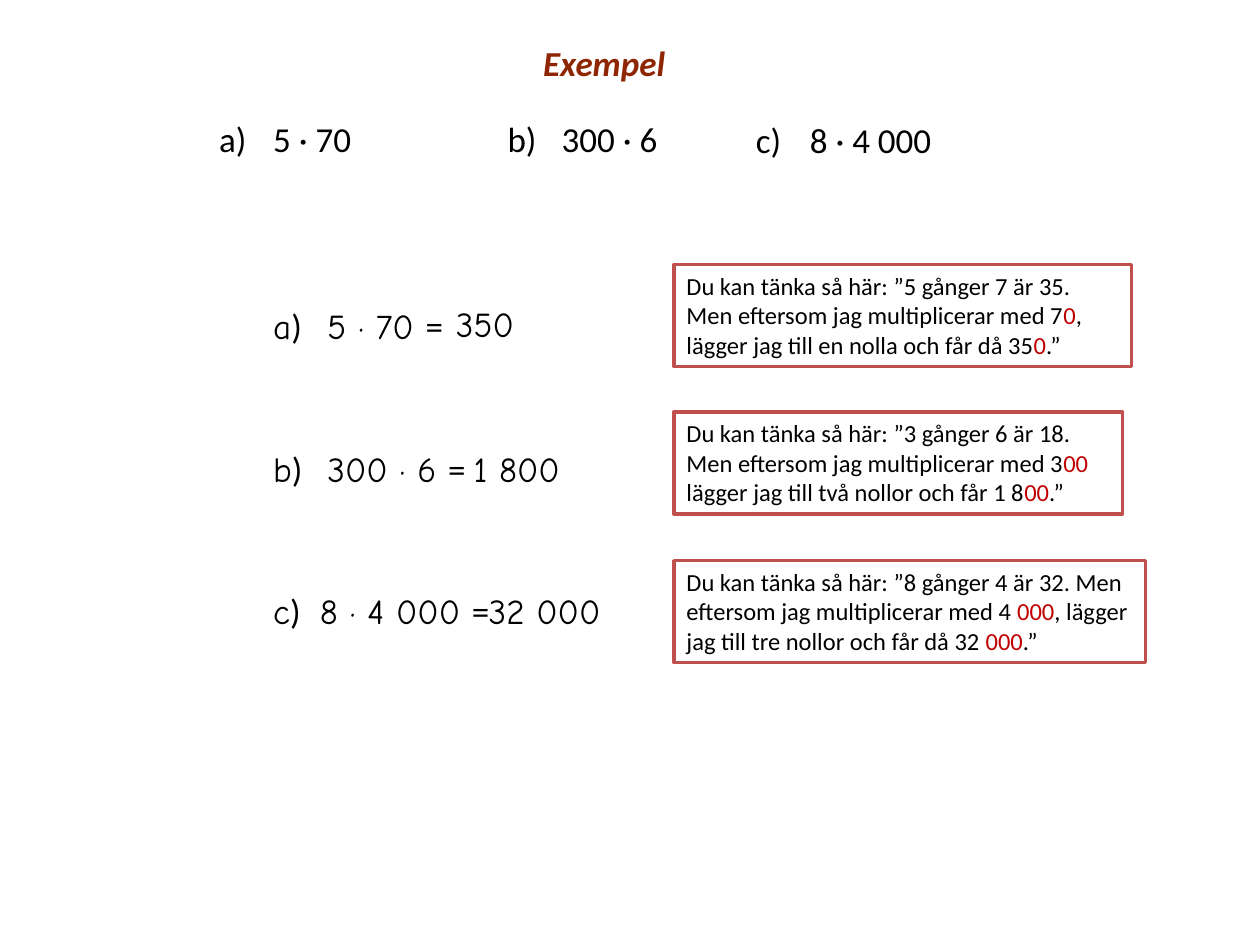
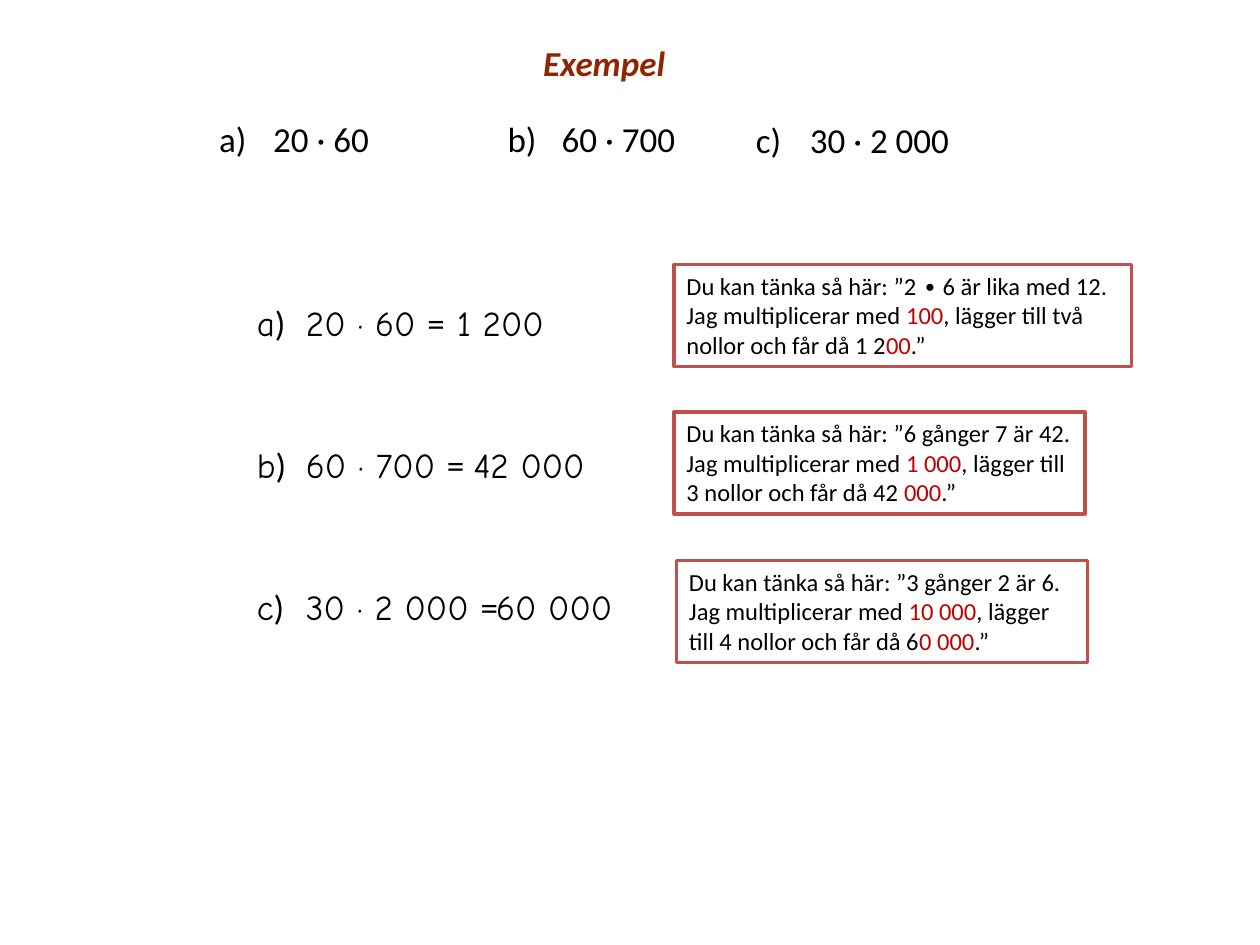
from collections import namedtuple
from dataclasses import dataclass

from pptx import Presentation
from pptx.dml.color import RGBColor as RGB
from pptx.enum.shapes import MSO_SHAPE as SHAPE
from pptx.enum.text import MSO_ANCHOR as ANCHOR, MSO_AUTO_SIZE as FIT, PP_ALIGN as ALIGN
from pptx.util import Emu, Pt


@dataclass(frozen=True)
class Theme:
    """Colours, fonts and type sizes shared by the slides."""
    ink: RGB = RGB.from_string("000000")
    paper: RGB = RGB.from_string("FFFFFF")
    title: RGB = RGB.from_string("8E2503")
    zeros: RGB = RGB.from_string("C00000")
    frame: RGB = RGB.from_string("C0504D")
    sans: str = "Calibri"
    hand: str = "Comic Neue"
    large: int = 20
    small: int = 14
    border: int = 2


T = Theme()
PX = 9144
LINE_H, LABEL_W, TASK_W, TASK_DX = 44, 54, 203, 43
ROW_STEP, CALLOUT_X, CALLOUT_H = 113, 535, 81
HEADER_SPOTS = [(164, 88), (393, 88), (590, 89)]

Box = namedtuple("Box", "x y w h")
Row = namedtuple("Row", "task task_dx task_w answer answer_dx answer_dy answer_w")
Callout = namedtuple("Callout", "dx w text")
Example = namedtuple("Example", "x y rows callouts")

EXAMPLES = [
    Example(207, 237, [
        Row("5 · 70", 43, 203, "350", 145, -2, 203),
        Row("300 · 6", 43, 203, "1 800", 159, 0, 98),
        Row("8 · 4 000", 37, 203, "32 000", 171, 0, 203),
    ], [
        Callout(0, 363, "Du kan tänka så här: ”5 gånger 7 är 35. Men eftersom jag multiplicerar "
                        "med 7|0|, lägger jag till en nolla och får då 35|0|.” "),
        Callout(0, 356, "Du kan tänka så här: ”3 gånger 6 är 18. Men eftersom jag multiplicerar "
                        "med 3|00 |lägger jag till två nollor och får 1 8|00|.” "),
        Callout(0, 374, "Du kan tänka så här: ”8 gånger 4 är 32. Men eftersom jag multiplicerar "
                        "med 4 |000|, lägger jag till tre nollor och får då 32 |000|.” "),
    ]),
    Example(194, 234, [
        Row("20 · 60", 39, 222, "1 200", 159, 0, 203),
        Row("60 · 700", 39, 215, "42 000", 172, 0, 112),
        Row("30 · 2 000", 39, 222, "60 000", 190, 0, 203),
    ], [
        Callout(0, 363, "Du kan tänka så här: ”2 ∙ 6 är lika med 12. Jag multiplicerar med "
                        "|100|, lägger till två nollor och får då 1 2|00|.” "),
        Callout(0, 326, "Du kan tänka så här: ”6 gånger 7 är 42. Jag multiplicerar med "
                        "|1 000|, lägger till 3 nollor och får då 42 |000|.” "),
        Callout(2, 326, "Du kan tänka så här: ”3 gånger 2 är 6. Jag multiplicerar med "
                        "|10 000|, lägger till 4 nollor och får då 6|0 000|.”"),
    ]),
]


def emu(box):
    """Turn a box in px into EMU lengths."""
    return [Emu(v * PX) for v in box]


def set_font(font, size, name=T.sans, color=T.ink):
    """Set size, typeface and colour of a font."""
    font.size, font.name, font.color.rgb = Pt(size), name, color


def add_text(s, box, text, name=T.sans, sans_tail=""):
    """Add a line of large text, with an optional tail in the sans font."""
    tf = s.shapes.add_textbox(*emu(box)).text_frame
    tf.word_wrap, tf.auto_size = True, FIT.SHAPE_TO_FIT_TEXT
    p = tf.paragraphs[0]
    set_font(p.font, T.large, name)
    p.add_run().text = text
    if sans_tail:
        r = p.add_run()
        r.text, r.font.name = sans_tail, T.sans


def add_title(s, box):
    """Move and format the title placeholder."""
    sp = s.shapes.title
    sp.left, sp.top, sp.width, sp.height = emu(box)
    tf = sp.text_frame
    tf.text = "Exempel"
    tf.word_wrap, tf.auto_size, tf.vertical_anchor = False, FIT.SHAPE_TO_FIT_TEXT, ANCHOR.TOP
    p = tf.paragraphs[0]
    p.alignment = ALIGN.LEFT
    set_font(p.font, T.large, color=T.title)
    p.font.bold = p.font.italic = True


def add_question(s, x, y, letter, task):
    """Add a lettered task at the top of the slide."""
    add_text(s, Box(x, y, LABEL_W, LINE_H), f"{letter})")
    add_text(s, Box(x + TASK_DX, y, TASK_W, LINE_H), f"{task} ")


def add_solution(s, x, y, letter, row):
    """Add a handwritten row with label, task and answer."""
    add_text(s, Box(x, y, LABEL_W, LINE_H), letter, T.hand, ")")
    add_text(s, Box(x + row.task_dx, y, row.task_w, LINE_H), f"{row.task} ", T.hand, "=")
    add_text(s, Box(x + row.answer_dx, y + row.answer_dy, row.answer_w, LINE_H), row.answer, T.hand)


def add_callout(s, box, text):
    """Add a framed explanation whose parts between bars are coloured."""
    sp = s.shapes.add_shape(SHAPE.RECTANGLE, *emu(box))
    sp.shadow.inherit = False
    sp.fill.solid()
    sp.fill.fore_color.rgb = T.paper
    sp.line.color.rgb, sp.line.width = T.frame, Pt(T.border)
    tf = sp.text_frame
    tf.word_wrap, tf.auto_size, tf.vertical_anchor = True, FIT.SHAPE_TO_FIT_TEXT, ANCHOR.TOP
    p = tf.paragraphs[0]
    p.alignment = ALIGN.LEFT
    set_font(p.font, T.small)
    for i, part in enumerate(text.split("|")):
        r = p.add_run()
        r.text = part
        r.font.color.rgb = T.zeros if i % 2 else T.ink


def add_example(prs, example):
    """Build one example slide."""
    s = prs.slides.add_slide(prs.slide_layouts.get_by_name("Title Only"))
    add_title(s, Box(421, 28, 118, LINE_H))
    parts = zip("abc", HEADER_SPOTS, example.rows, example.callouts)
    for i, (letter, spot, row, callout) in enumerate(parts):
        add_question(s, *spot, letter, row.task)
        add_solution(s, example.x, example.y + i * ROW_STEP, letter, row)
        box = Box(CALLOUT_X + callout.dx, 210 + i * 235 // 2, callout.w, CALLOUT_H)
        add_callout(s, box, callout.text)


def main():
    """Build and save the presentation."""
    prs = Presentation()
    prs.slide_width, prs.slide_height = emu((1000, 750))
    for example in EXAMPLES:
        add_example(prs, example)
    prs.save("out.pptx")


if __name__ == "__main__":
    main()
